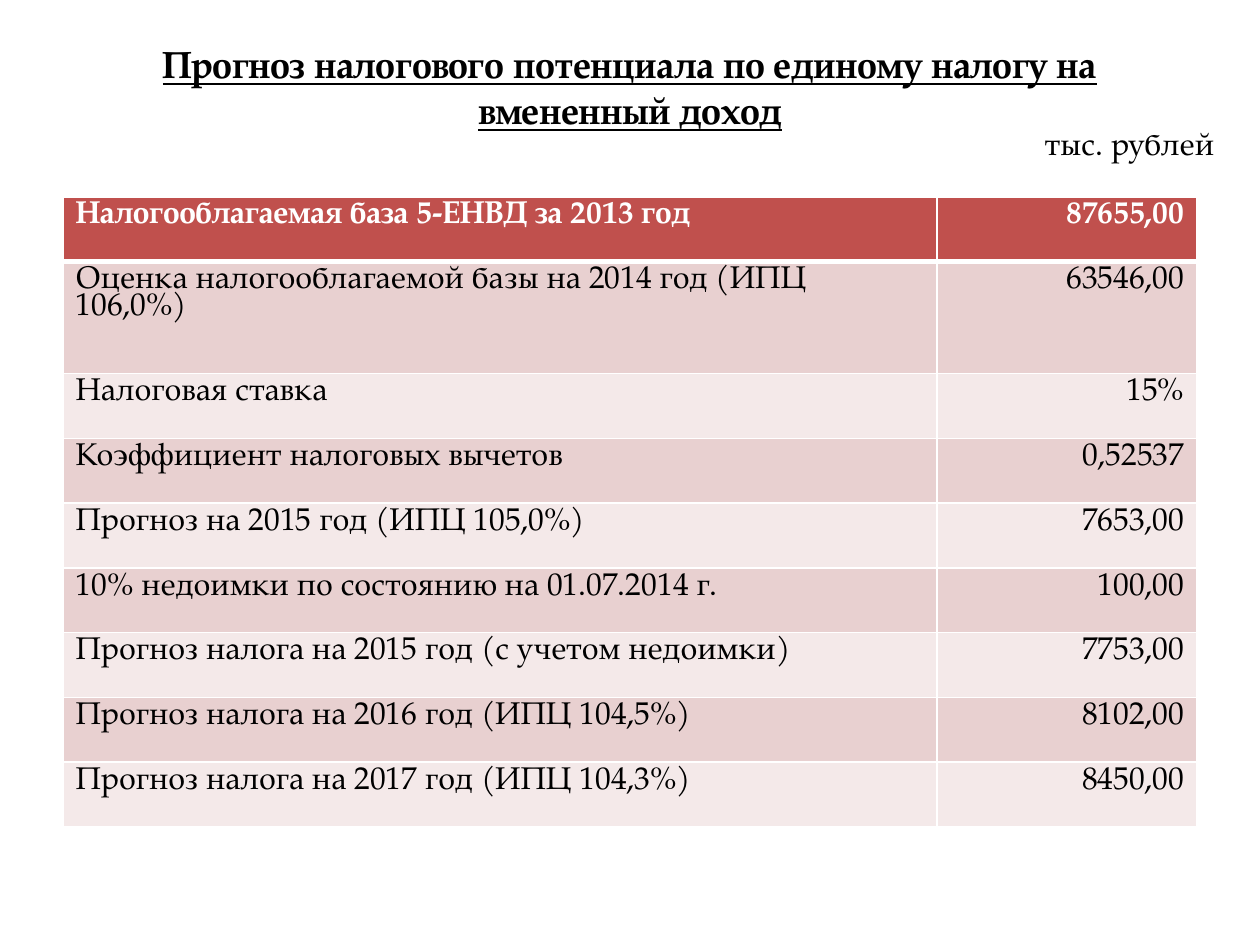
from lxml import etree
from pptx import Presentation
from pptx.dml.color import RGBColor
from pptx.enum.text import MSO_ANCHOR, PP_ALIGN
from pptx.oxml.ns import qn
from pptx.util import Pt

LEFT, CENTER, RIGHT = PP_ALIGN.LEFT, PP_ALIGN.CENTER, PP_ALIGN.RIGHT
MIDDLE = MSO_ANCHOR.MIDDLE
FONT = "TeX Gyre Pagella"
COLORS = {
    "text": "000000",
    "white": "FFFFFF",
    "header": "C0504D",
    "dark_band": "E8D0D0",
    "light_band": "F4E9E9",
}
ROWS = [
    ("Налогооблагаемая база 5-ЕНВД за 2013 год", "87655,00"),
    ("Оценка налогооблагаемой базы на 2014 год (ИПЦ 106,0%)", "63546,00"),
    ("Налоговая ставка", "15%"),
    ("Коэффициент налоговых вычетов", "0,52537"),
    ("Прогноз на 2015 год (ИПЦ 105,0%)", "7653,00"),
    ("10% недоимки по состоянию на 01.07.2014 г.", "100,00"),
    ("Прогноз налога на 2015 год (с учетом недоимки)", "7753,00"),
    ("Прогноз налога на 2016 год (ИПЦ 104,5%)", "8102,00"),
    ("Прогноз налога на 2017 год (ИПЦ 104,3%)", "8450,00"),
]
ROW_HEIGHT, TALL_ROW_HEIGHT = 37, 64


def write(frame, text, size, align, color="text", bold=False):
    """Put one formatted run into the first paragraph and return both."""
    para = frame.paragraphs[0]
    para.alignment = align
    span = para.add_run()
    span.text = text
    span.font.name = FONT
    span.font.size = Pt(size)
    span.font.bold = bold
    span.font.color.rgb = RGBColor.from_string(COLORS[color])
    return para, span


def set_borders(cell, bottom):
    """Draw white cell borders, 1 pt except for the given bottom width."""
    properties = cell._tc.get_or_add_tcPr()
    widths = {"a:lnL": 1, "a:lnR": 1, "a:lnT": 1, "a:lnB": bottom}
    for position, (tag, width) in enumerate(widths.items()):
        line = etree.Element(qn(tag), w=str(Pt(width)))
        fill = etree.SubElement(line, qn("a:solidFill"))
        etree.SubElement(fill, qn("a:srgbClr"), val=COLORS["white"])
        properties.insert(position, line)


deck = Presentation()
deck.slide_width, deck.slide_height = Pt(720), Pt(540)
page = deck.slides.add_slide(deck.slide_layouts[5])

title = page.shapes.title
title.left, title.top, title.width, title.height = Pt(36), Pt(21.6), Pt(648), Pt(55.5)
title.text_frame.vertical_anchor = MIDDLE
para, span = write(
    title.text_frame,
    "Прогноз налогового потенциала по единому налогу на вмененный доход",
    21.6, CENTER, bold=True,
)
span.font.underline = True

table_height = ROW_HEIGHT * (len(ROWS) - 1) + TALL_ROW_HEIGHT
table = page.shapes.add_table(
    len(ROWS), 2, Pt(36), Pt(112.5), Pt(648), Pt(table_height)
).table
table.columns[0].width, table.columns[1].width = Pt(499.5), Pt(148.5)

for index, texts in enumerate(ROWS):
    header = index == 0
    band = "header" if header else "dark_band" if index % 2 else "light_band"
    table.rows[index].height = Pt(TALL_ROW_HEIGHT if index == 1 else ROW_HEIGHT)
    for column, (text, align) in enumerate(zip(texts, (LEFT, RIGHT))):
        cell = table.cell(index, column)
        cell.fill.solid()
        cell.fill.fore_color.rgb = RGBColor.from_string(COLORS[band])
        set_borders(cell, bottom=3 if header else 1)
        para, span = write(
            cell.text_frame, text, 18, align, "white" if header else "text", header
        )
        para.line_spacing = 0.83

unit_box = page.shapes.add_textbox(Pt(586), Pt(67.7), Pt(119), Pt(28))
unit_box.text_frame.word_wrap = True
unit_box.text_frame.vertical_anchor = MIDDLE
write(unit_box.text_frame, "тыс. рублей", 18, CENTER)

deck.save("out.pptx")
